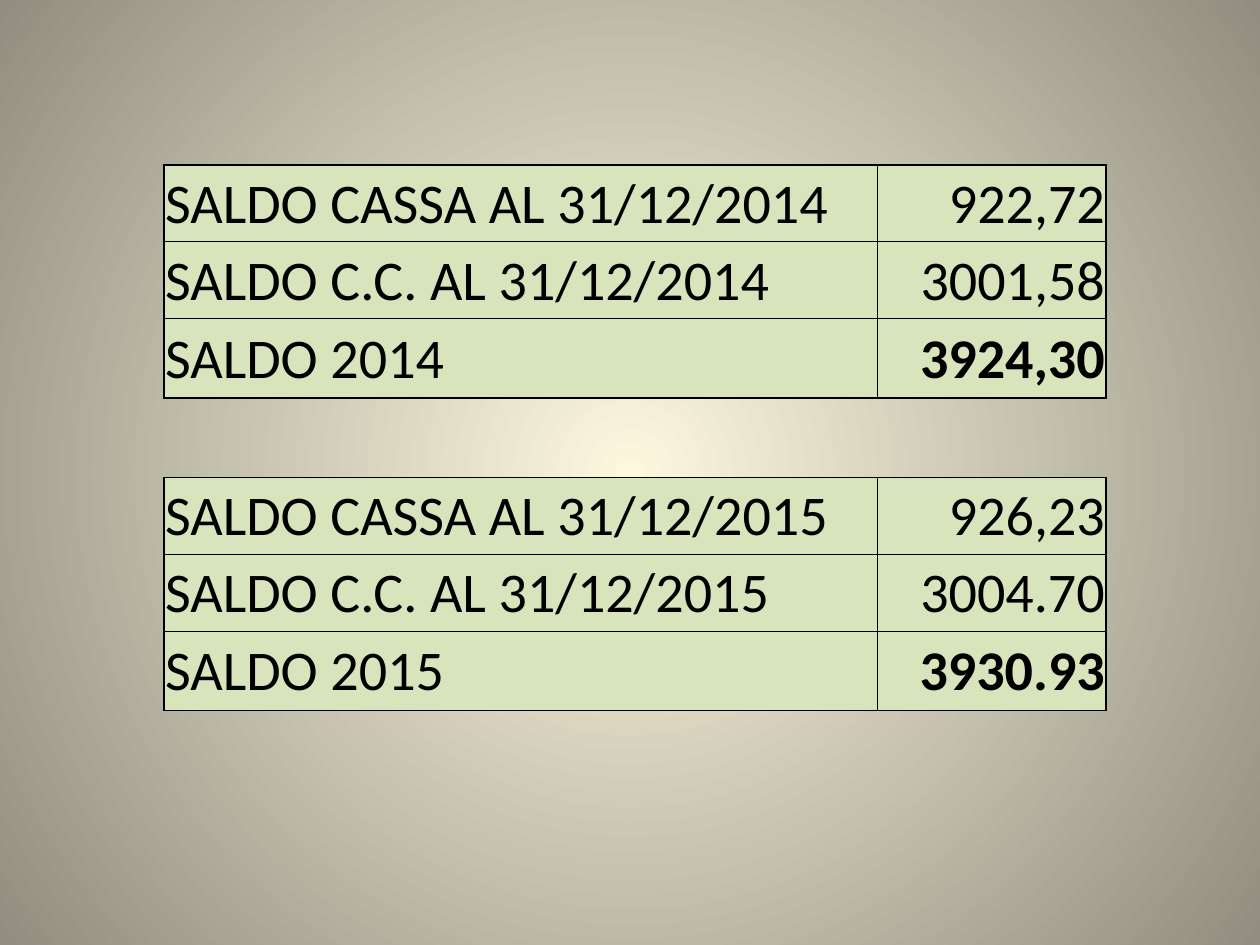
import dataclasses

import pptx
import pptx.dml.color
import pptx.enum.text
import pptx.oxml
import pptx.oxml.ns
import pptx.util

Inches = pptx.util.Inches
qn = pptx.oxml.ns.qn
ALIGN = pptx.enum.text.PP_ALIGN
NS = pptx.oxml.ns.nsdecls("a")
PLAIN = "{2D5ABB26-0587-4C30-8999-92F81FD0307C}"  # no style, no grid
THIN, THICK = 0.5, 1


@dataclasses.dataclass
class Entry:
    label: str
    value: str
    top: float = THIN
    base: float = THIN
    bold: bool = False


def color(code: str) -> pptx.dml.color.RGBColor:
    return pptx.dml.color.RGBColor.from_string(code)


def paint(slide) -> None:
    fill = slide.background.fill
    fill.gradient()
    for stop, place, code in zip(fill.gradient_stops, (0, 1), ("FCF7DD", "918E81")):
        stop.position = place
        stop.color.rgb = color(code)
    grad = slide.element.find(".//" + qn("a:gradFill"))
    grad.replace(grad.find(qn("a:lin")), pptx.oxml.parse_xml(
        f'<a:path {NS} path="circle"><a:fillToRect l="50000" t="50000" '
        'r="50000" b="50000"/></a:path>'))


def edge(cell, **sides: float) -> None:
    """Draw black borders; sides come in the order L, R, T, B."""
    props = cell._tc.get_or_add_tcPr()
    for side, width in sides.items():
        props.append(pptx.oxml.parse_xml(
            f'<a:ln{side} {NS} w="{pptx.util.Pt(width)}"><a:solidFill>'
            f'<a:srgbClr val="000000"/></a:solidFill></a:ln{side}>'))


def write(cell, text: str, align, bold: bool) -> None:
    cell.fill.solid()
    cell.fill.fore_color.rgb = color("D7E4BC")
    cell.vertical_anchor = pptx.enum.text.MSO_ANCHOR.MIDDLE
    cell.margin_left = cell.margin_right = cell.margin_top = Inches(0.01)
    cell.margin_bottom = 0
    cell.text = text
    para = cell.text_frame.paragraphs[0]
    para.alignment = align
    para.font.name = "Calibri"
    para.font.size = pptx.util.Pt(32)
    para.font.bold = bold
    para.font.color.rgb = color("000000")


def fill_row(cells, entry: Entry) -> None:
    name, sum_ = cells
    edge(name, L=THICK, R=THIN, T=entry.top, B=entry.base)
    edge(sum_, L=THIN, R=THICK, T=entry.top, B=entry.base)
    write(name, entry.label, ALIGN.LEFT, False)
    write(sum_, entry.value, ALIGN.RIGHT, entry.bold)


def block(year: int, cash: str, bank: str, total: str) -> list[Entry]:
    return [
        Entry(f"SALDO CASSA AL 31/12/{year}", cash, top=THICK),
        Entry(f"SALDO C.C. AL 31/12/{year}", bank),
        Entry(f"SALDO {year}", total, base=THICK, bold=True),
    ]


def main() -> None:
    deck = pptx.Presentation()
    deck.slide_width, deck.slide_height = Inches(10), Inches(7.5)
    slide = deck.slides.add_slide(deck.slide_layouts[6])
    paint(slide)

    # Two yearly blocks with an open row between them
    rows = [*block(2014, "922,72", "3001,58", "3924,30"), None,
            *block(2015, "926,23", "3004.70", "3930.93")]
    frame = slide.shapes.add_table(
        len(rows), 2, Inches(1.3), Inches(1.31), Inches(7.48), Inches(4.33))
    frame.element.find(".//" + qn("a:tableStyleId")).text = PLAIN
    table = frame.table
    table.first_row = table.horz_banding = False
    for col, width in zip(table.columns, (5.66, 1.82)):
        col.width = Inches(width)

    for row, entry in zip(table.rows, rows):
        tall = entry is None or entry.bold
        row.height = Inches(0.63 if tall else 0.61)
        if entry:
            fill_row(row.cells, entry)
        else:
            for cell in row.cells:
                edge(cell, T=THICK, B=THICK)
                cell.fill.background()

    deck.save("out.pptx")


if __name__ == "__main__":
    main()
